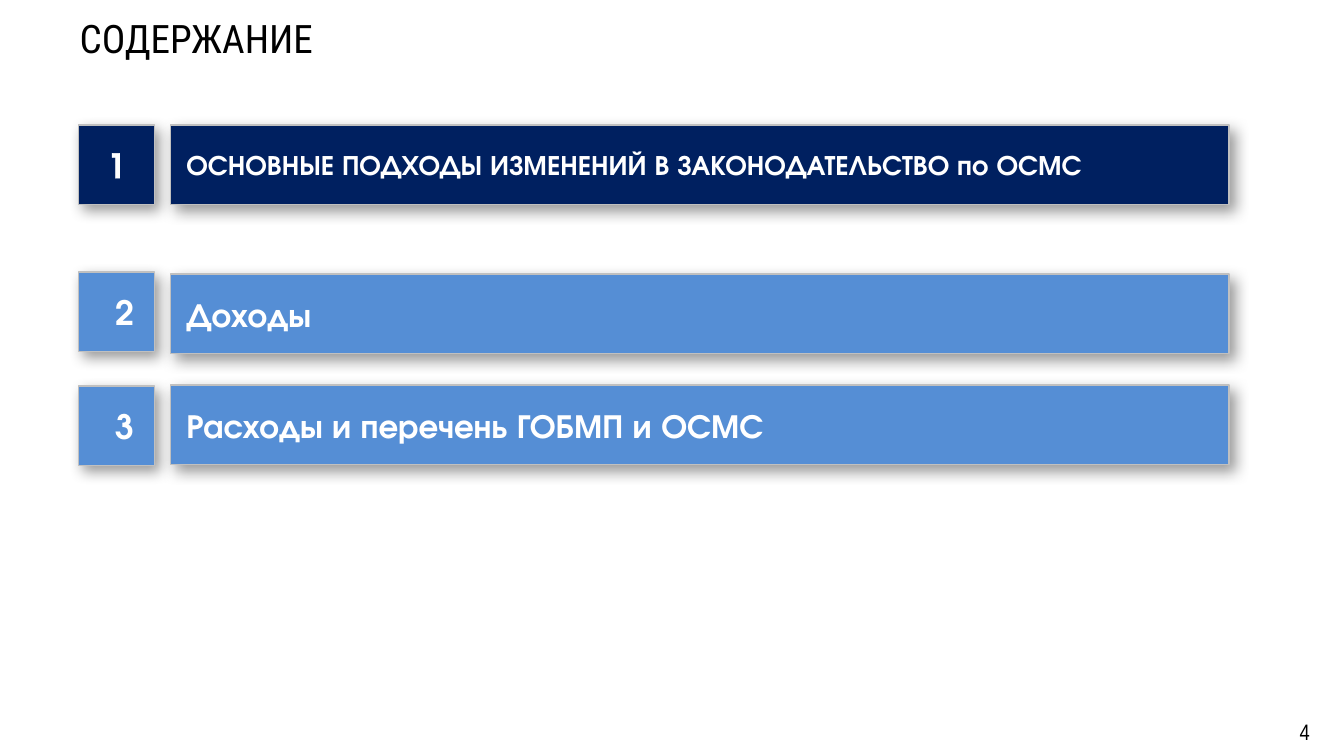
from dataclasses import dataclass

from lxml import etree
from pptx import Presentation
from pptx.dml.color import RGBColor
from pptx.enum.shapes import MSO_SHAPE
from pptx.enum.text import MSO_ANCHOR, MSO_AUTO_SIZE, PP_ALIGN
from pptx.oxml.ns import qn
from pptx.util import Inches, Pt

RECT = MSO_SHAPE.RECTANGLE
TOP, MIDDLE = MSO_ANCHOR.TOP, MSO_ANCHOR.MIDDLE
LEFT, CENTER, RIGHT = PP_ALIGN.LEFT, PP_ALIGN.CENTER, PP_ALIGN.RIGHT
FIXED = MSO_AUTO_SIZE.NONE

WIDE, HIGH = Inches(13.33), Inches(7.5)
COLORS = {"navy": "002060", "blue": "558ED5", "edge": "C0C0C0",
          "white": "FFFFFF", "black": "000000"}
HEAD, BODY, FOOT = "Roboto Condensed", "TeX Gyre Adventor", "Arial Narrow"
INDENT = 0.16


@dataclass(frozen=True)
class Box:
    left: float
    top: float
    width: float
    height: float

    def place(self) -> tuple[int, int, int, int]:
        return (int(WIDE * self.left / 100), int(HIGH * self.top / 100),
                int(WIDE * self.width / 100), int(HIGH * self.height / 100))


@dataclass(frozen=True)
class Item:
    num: str
    text: str
    fill: str
    size: int
    tops: tuple[float, float]
    inset: float = INDENT
    trim: bool = False


NUM_X, NUM_W = 5.85, 5.63
BAR_X, BAR_W = 12.68, 78.77
ROW_H = 10.53
TITLE = Box(5.18, 1.2, 73.82, 7.6)
PAGE = Box(87.47, 94.13, 10.73, 5.33)
ITEMS = (
    Item("1", "ОСНОВНЫЕ ПОДХОДЫ ИЗМЕНЕНИЙ В ЗАКОНОДАТЕЛЬСТВО по ОСМС",
         "navy", 20, (16.53, 16.53), inset=0, trim=True),
    Item("2", "Доходы", "blue", 24, (36, 36.27)),
    Item("3", "Расходы и перечень ГОБМП и ОСМС", "blue", 24, (51.07, 50.93)),
)


def color(name: str) -> RGBColor:
    return RGBColor.from_string(COLORS[name])


def solid(parent, name: str):
    fill = etree.SubElement(parent, qn("a:solidFill"))
    return etree.SubElement(fill, qn("a:srgbClr"), val=COLORS[name])


def write(shape, text: str, *, size: int, font: str, tint: str,
          align=LEFT, anchor=MIDDLE, bold: bool = False,
          inset: tuple[float, ...] = (0.1, 0.05, 0.1, 0.05)):
    frame = shape.text_frame
    frame.word_wrap = True
    frame.auto_size = FIXED
    frame.vertical_anchor = anchor
    (frame.margin_left, frame.margin_top,
     frame.margin_right, frame.margin_bottom) = map(Inches, inset)
    para = frame.paragraphs[0]
    para.alignment = align
    run = para.add_run()
    run.text = text
    run.font.size = Pt(size)
    run.font.name = font
    run.font.bold = bold
    run.font.color.rgb = color(tint)
    return run


def shade(shape) -> None:
    shape.shadow.inherit = False
    effects = shape._element.spPr.find(qn("a:effectLst"))
    outer = etree.SubElement(effects, qn("a:outerShdw"), blurRad=str(Pt(10)),
                             dist=str(Pt(5)), dir=str(45 * 60000),
                             algn="tl", rotWithShape="0")
    tone = etree.SubElement(outer, qn("a:srgbClr"), val=COLORS["black"])
    etree.SubElement(tone, qn("a:alpha"), val="40000")


def panel(slide, box: Box, fill: str):
    shape = slide.shapes.add_shape(RECT, *box.place())
    shape.fill.solid()
    shape.fill.fore_color.rgb = color(fill)
    shape.line.color.rgb = color("edge")
    shape.line.width = Pt(1)
    shade(shape)
    return shape


def trim(run) -> None:
    line = etree.Element(qn("a:ln"), w=str(Pt(0.75)))
    solid(line, "white")
    run.font._element.insert(0, line)


def row(slide, item: Item) -> None:
    num_y, bar_y = item.tops
    num = panel(slide, Box(NUM_X, num_y, NUM_W, ROW_H), item.fill)
    run = write(num, item.num, size=24, font=BODY, tint="white", bold=True,
                align=CENTER, inset=(item.inset, 0, 0, 0))
    if item.trim:
        trim(run)
    bar = panel(slide, Box(BAR_X, bar_y, BAR_W, ROW_H), item.fill)
    write(bar, item.text, size=item.size, font=BODY, tint="white", bold=True,
          inset=(INDENT, 0, 0, 0))


def main() -> None:
    deck = Presentation()
    deck.slide_width, deck.slide_height = WIDE, HIGH
    slide = deck.slides.add_slide(deck.slide_layouts[5])
    title = slide.shapes.title
    title.left, title.top, title.width, title.height = TITLE.place()
    write(title, "СОДЕРЖАНИЕ", size=28, font=HEAD, tint="black", anchor=TOP)
    for item in ITEMS:
        row(slide, item)
    page = slide.shapes.add_textbox(*PAGE.place())
    write(page, "4", size=16, font=FOOT, tint="black", align=RIGHT)
    deck.save("out.pptx")


if __name__ == "__main__":
    main()
